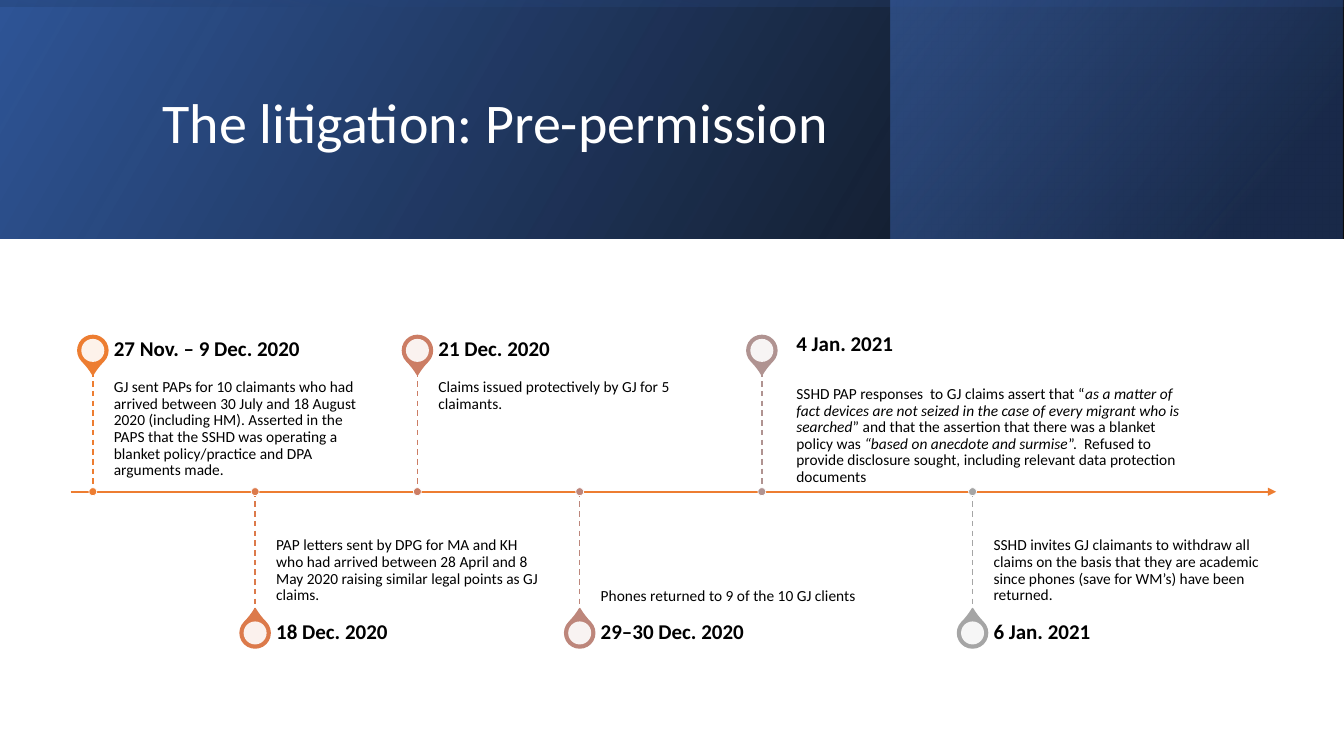
from lxml.etree import SubElement
from pptx import Presentation
from pptx.dml.color import RGBColor
from pptx.enum.dml import MSO_LINE as Dash
from pptx.enum.shapes import MSO_CONNECTOR as Link, MSO_SHAPE as Form
from pptx.enum.text import MSO_ANCHOR as Anchor, PP_ALIGN as Align
from pptx.oxml.ns import qn
from pptx.util import Cm, Pt

WIDE, HIGH = 33.87, 19.05
BAND = 6.02
AXIS, STALK = 12.39, 3.03
EVENTS = [
    (2.34, "ED7D31", "27 Nov. – 9 Dec. 2020",
     ["GJ sent PAPs for 10 claimants who had arrived between 30 July and 18 August 2020 "
      "(including HM). Asserted in the PAPS that the SSHD was operating a blanket "
      "policy/practice and DPA arguments made."]),
    (6.43, "DC7A4B", "18 Dec. 2020",
     ["PAP letters sent by DPG for MA and KH who had arrived between 28 April and 8 May 2020 "
      "raising similar legal points as GJ claims."]),
    (10.52, "CC7D64", "21 Dec. 2020",
     ["Claims issued protectively by GJ for 5 claimants."]),
    (14.61, "BD867B", "29–30 Dec. 2020",
     ["Phones returned to 9 of the 10 GJ clients"]),
    (19.2, "B09391", "4 Jan. 2021",
     ["SSHD PAP responses  to GJ claims assert that “",
      "as a matter of fact devices are not seized in the case of every migrant who is searched",
      "” and that the assertion that there was a blanket policy was ",
      "“based on anecdote and surmise",
      "”.  Refused to provide disclosure sought, including relevant data protection documents"]),
    (24.51, "A5A5A5", "6 Jan. 2021",
     ["SSHD invites GJ claimants to withdraw all claims on the basis that they are academic "
      "since phones (save for WM’s) have been returned."]),
]
MOVED = {4: ((20.07, 8.26, 9.88, 0.84), (20.07, 9.53, 9.88, 2.39))}


def tint(code):
    return RGBColor.from_string(code)


class Deck:
    font = "Calibri"
    ink = "000000"

    def __init__(self):
        self.file = Presentation()
        self.file.slide_width, self.file.slide_height = Cm(WIDE), Cm(HIGH)
        self.slide = self.file.slides.add_slide(self.file.slide_layouts[5])
        self.shapes = self.slide.shapes

    def fade(self, shape, *alphas):
        for clr, alpha in zip(shape.element.spPr.iter(qn("a:srgbClr")), alphas):
            SubElement(clr, qn("a:alpha")).set("val", str(alpha * 1000))

    def shape(self, form, box, fill=None, edge=None, width=1, turn=0):
        item = self.shapes.add_shape(form, *map(Cm, box))
        item.shadow.inherit = False
        item.rotation = turn
        if fill:
            item.fill.solid()
            item.fill.fore_color.rgb = tint(fill)
        if edge:
            item.line.color.rgb = tint(edge)
            item.line.width = Pt(width)
        else:
            item.line.fill.background()
        return item

    def disc(self, x, y, size, fill, edge=None, width=1, form=Form.OVAL, turn=0):
        box = x - size / 2, y - size / 2, size, size
        return self.shape(form, box, fill, edge, width, turn)

    def band(self, box, angle, stops, turn=0):
        item = self.shape(Form.RECTANGLE, box, turn=turn)
        item.element.spPr.find(qn("a:xfrm")).set("flipH", "1")
        item.fill.gradient()
        item.fill.gradient_angle = 360 - angle
        for stop, (place, code, _) in zip(item.fill.gradient_stops, stops):
            stop.position = place
            stop.color.rgb = tint(code)
        self.fade(item, *(alpha for _, _, alpha in stops))

    def line(self, start, end, code, width, dash=None, arrow=False):
        item = self.shapes.add_connector(Link.STRAIGHT, *map(Cm, start + end))
        item.line.color.rgb = tint(code)
        item.line.width = Pt(width)
        if dash:
            item.line.dash_style = dash
        prop = item.element.spPr
        if arrow:
            SubElement(prop.find(qn("a:ln")), qn("a:tailEnd")).set("type", "triangle")
        SubElement(prop, qn("a:effectLst"))

    def words(self, frame, parts, size, code, anchor, bold=False):
        frame.word_wrap = True
        frame.vertical_anchor = anchor
        para = frame.paragraphs[0]
        para.alignment = Align.LEFT
        para.line_spacing = 0.9
        para.font.name, para.font.size = self.font, Pt(size)
        para.font.bold = bold
        para.font.color.rgb = tint(code)
        for i, part in enumerate(parts):
            run = para.add_run()
            run.text = part
            if i % 2:
                run.font.italic = True

    def text(self, box, parts, size, anchor, pads, bold=False):
        frame = self.shapes.add_textbox(*map(Cm, box)).text_frame
        (frame.margin_left, frame.margin_top,
         frame.margin_right, frame.margin_bottom) = map(Cm, pads)
        self.words(frame, parts, size, self.ink, anchor, bold)

    def title(self, box, label):
        item = self.shapes.title
        item.left, item.top, item.width, item.height = map(Cm, box)
        self.words(item.text_frame, [label], 40, "FFFFFF", Anchor.MIDDLE)
        item.element.getparent().append(item.element)

    def event(self, x, code, date, parts, above, boxes):
        side = -1 if above else 1
        end = AXIS + side * STALK
        pin = end + side * 0.53
        left = x + 0.53
        head, body = boxes or (
            (left, end - 1.07 if above else end, 6.78, 1.07),
            (left, min(end, AXIS), 6.78, STALK))
        drop = self.disc(x, pin, 0.76, code, code, 1, Form.TEAR, 135 if above else 315)
        drop.adjustments[0] = 1.15
        self.fade(self.disc(x, pin, 0.58, "FFFFFF"), 90)
        pads = (0, 0.2, 0.2, 0.28) if above else (0, 0.28, 0, 0.2)
        self.text(body, parts, 11, Anchor.TOP if above else Anchor.BOTTOM, pads)
        self.text(head, [date], 15, Anchor.MIDDLE, (0, 0, 0.25, 0), True)
        self.line((x, min(end, AXIS)), (x, max(end, AXIS)), code, 1, Dash.DASH)
        self.disc(x, AXIS, 0.2, code, "FFFFFF", 0.5)


def main():
    deck = Deck()
    deck.band((0, 0, WIDE, BAND), 330, [(0, "000000", 96), (1, "2F5597", 100)])
    deck.band((22.45, 0, 11.38, BAND), 320, [(0.19, "203864", 68), (1, "4472C4", 48)])
    shift = (WIDE - BAND) / 2
    deck.band((shift, -shift, BAND, WIDE), 350,
              [(0.23, "2F5597", 16), (0.99, "000000", 45)], 270)
    deck.title((3.84, 0.97, 27, 4.37), "The litigation: Pre-permission")
    deck.line((1.78, AXIS), (32.16, AXIS), "ED7D31", 1.5, arrow=True)
    for i, event in enumerate(EVENTS):
        deck.event(*event, above=i % 2 == 0, boxes=MOVED.get(i))
    deck.file.save("out.pptx")


if __name__ == "__main__":
    main()
